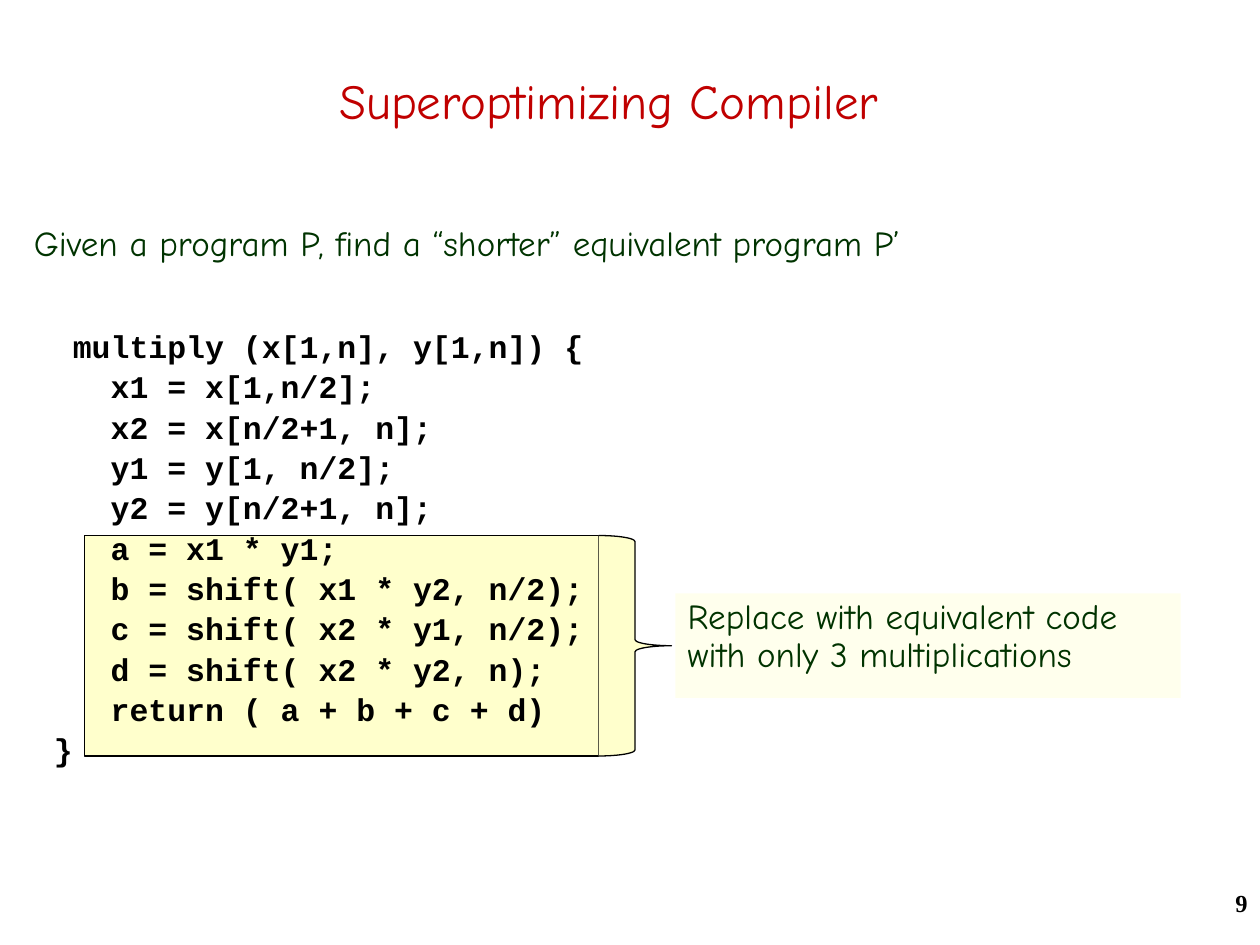
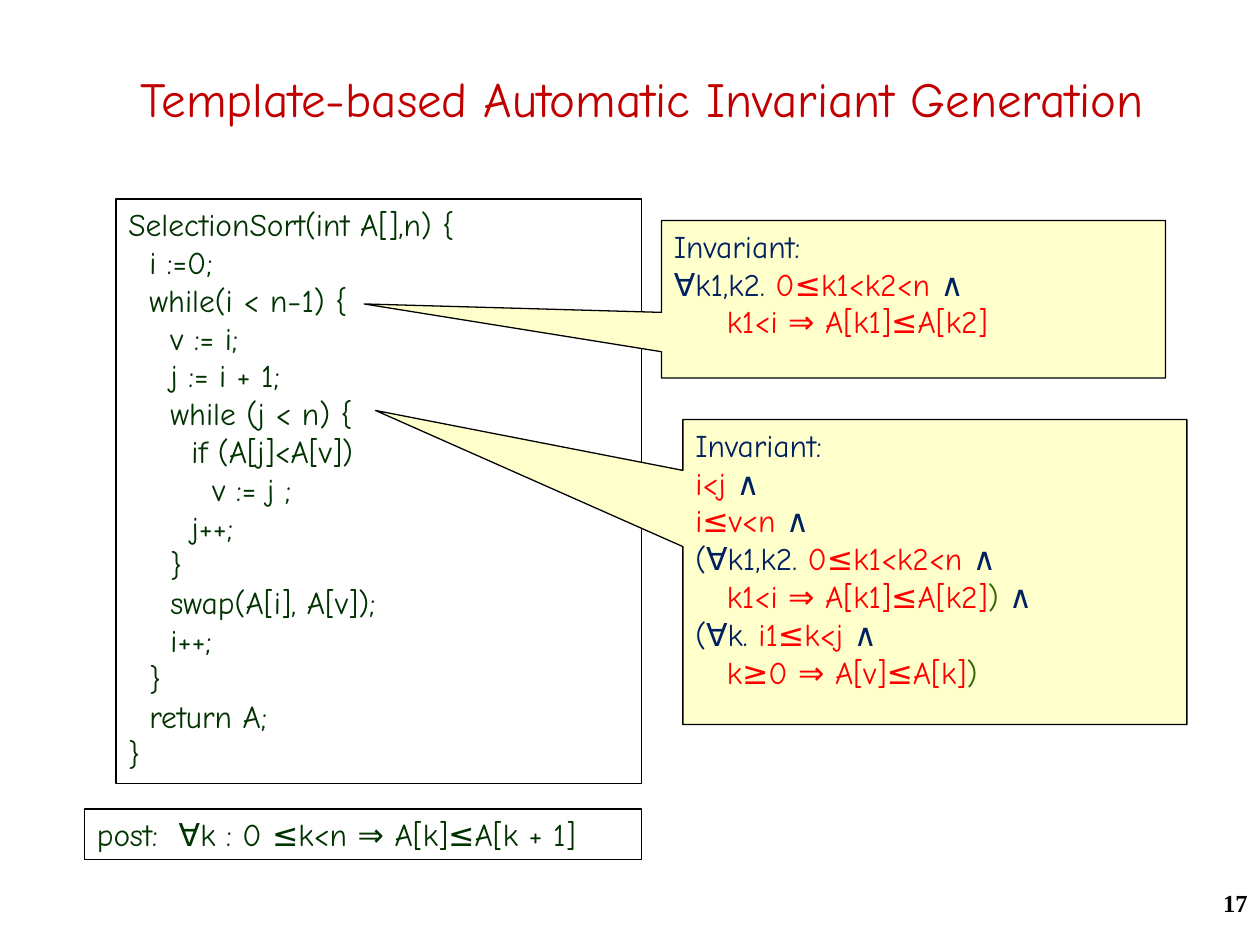
from dataclasses import dataclass

import lxml.etree
import pptx
import pptx.dml.color
import pptx.enum.shapes
import pptx.enum.text
import pptx.oxml.ns
import pptx.util

Inches = pptx.util.Inches
RGBColor = pptx.dml.color.RGBColor
Shape = pptx.enum.shapes.MSO_SHAPE
Align = pptx.enum.text.PP_ALIGN
Anchor = pptx.enum.text.MSO_ANCHOR

BLACK = RGBColor(0x00, 0x00, 0x00)
TITLE_RED = RGBColor(0xC0, 0x00, 0x00)
DARK_GREEN = RGBColor(0x00, 0x33, 0x00)
LEAF_GREEN = RGBColor(0x33, 0x66, 0x00)
NAVY = RGBColor(0x00, 0x20, 0x60)
RED = RGBColor(0xFF, 0x00, 0x00)
PALE_YELLOW = RGBColor(0xFF, 0xFF, 0xCC)

HAND = "Comic Neue"
MONO = "Courier New"
SERIF = "Times New Roman"


@dataclass(frozen=True)
class Style:
    font: str
    size: float
    color: RGBColor
    bold: bool = False
    align: Align = Align.LEFT
    anchor: Anchor = Anchor.TOP
    line_spacing: float = 1.0
    space_before: float = 0


TITLE = Style(HAND, 28, TITLE_RED, align=Align.CENTER, anchor=Anchor.MIDDLE)
BODY = Style(HAND, 20, DARK_GREEN, line_spacing=0.9)
CODE = Style(MONO, 18, BLACK, bold=True, line_spacing=0.9, space_before=3.6)
SKETCH = Style(HAND, 18, DARK_GREEN)
INVARIANT = Style(HAND, 18, NAVY)
PAGE_NUMBER = Style(SERIF, 14, BLACK, bold=True, align=Align.RIGHT)


@dataclass(frozen=True)
class Span:
    text: str
    color: RGBColor | None = None


@dataclass(frozen=True)
class Line:
    spans: tuple[Span, ...]
    indent: float = 0
    tab: float = 0


@dataclass(frozen=True)
class Box:
    left: float
    top: float
    width: float
    height: float
    style: Style | None = None
    lines: tuple[Line, ...] = ()
    kind: Shape | None = None
    fill: RGBColor | None = None
    opacity: int = 100
    outlined: bool = True
    adjustments: tuple[float, ...] = ()


def plain(text: str) -> tuple[Line, ...]:
    """One unstyled line per row of text."""
    return tuple(Line((Span(row),)) for row in text.split("\n"))


def write_lines(shape, style: Style, lines: tuple[Line, ...]) -> None:
    frame = shape.text_frame
    frame.word_wrap = True
    frame.vertical_anchor = style.anchor
    frame.text = "\n".join("" for _ in lines)
    for index, (para, line) in enumerate(zip(frame.paragraphs, lines)):
        properties = para._p.get_or_add_pPr()
        if line.indent:
            properties.set("marL", str(Inches(line.indent)))
        if line.tab:
            stops = lxml.etree.SubElement(properties, pptx.oxml.ns.qn("a:tabLst"))
            lxml.etree.SubElement(stops, pptx.oxml.ns.qn("a:tab"),
                                  pos=str(Inches(line.tab)), algn="l")
        para.alignment = style.align
        para.line_spacing = style.line_spacing
        if index:
            para.space_before = pptx.util.Pt(style.space_before)
        for span in line.spans:
            run = para.add_run()
            run.text = span.text
            run.font.name = style.font
            run.font.size = pptx.util.Pt(style.size)
            run.font.bold = style.bold
            run.font.color.rgb = span.color or style.color


def paint(shape, box: Box) -> None:
    shape.shadow.inherit = False
    if box.fill is None:
        shape.fill.background()
    else:
        shape.fill.solid()
        shape.fill.fore_color.rgb = box.fill
        if box.opacity < 100:
            color = shape._element.spPr.find(".//" + pptx.oxml.ns.qn("a:srgbClr"))
            lxml.etree.SubElement(color, pptx.oxml.ns.qn("a:alpha"),
                                  val=str(box.opacity * 1000))
    if box.outlined:
        shape.line.color.rgb = BLACK
        shape.line.width = pptx.util.Pt(0.75)
    else:
        shape.line.fill.background()


def draw(page, box: Box) -> None:
    place = [Inches(n) for n in (box.left, box.top, box.width, box.height)]
    if box.kind is None:
        shape = page.shapes.add_textbox(*place)
    else:
        shape = page.shapes.add_shape(box.kind, *place)
        for index, value in enumerate(box.adjustments):
            shape.adjustments[index] = value
        paint(shape, box)
    if box.style:
        write_lines(shape, box.style, box.lines)


def add_page(deck, number: str, boxes: list[Box]) -> None:
    page = deck.slides.add_slide(deck.slide_layouts[6])
    footer = Box(7.92, 7, 2.08, 0.5, PAGE_NUMBER, plain(number))
    for box in [*boxes, footer]:
        draw(page, box)


def callout(left: float, top: float, height: float, tip: tuple[float, float],
            lines: tuple[Line, ...]) -> Box:
    return Box(left, top, 4, height, INVARIANT, lines,
               Shape.RECTANGULAR_CALLOUT, PALE_YELLOW, adjustments=tip)


# Slide 1: code to be shortened
MULTIPLY = """ multiply (x[1,n], y[1,n]) {
   x1 = x[1,n/2];
   x2 = x[n/2+1, n];
   y1 = y[1, n/2];
   y2 = y[n/2+1, n];
   a = x1 * y1;
   b = shift( x1 * y2, n/2);
   c = shift( x2 * y1, n/2);
   d = shift( x2 * y2, n);
   return ( a + b + c + d)
}"""

COMPILER = [
    Box(0.67, 4.25, 4.08, 1.75, kind=Shape.RECTANGLE, fill=PALE_YELLOW),
    Box(0.58, 0.17, 8.5, 1.25, TITLE, plain("Superoptimizing Compiler")),
    Box(0.17, 1.75, 9.58, 0.58, BODY,
        plain("Given a program P, find a “shorter” equivalent program P’")),
    Box(0.33, 2.58, 5.5, 3.92, CODE, plain(MULTIPLY)),
    Box(5.36, 4.71, 4.01, 0.83, BODY,
        plain("Replace with equivalent code with only 3 multiplications"),
        Shape.RECTANGLE, PALE_YELLOW, opacity=34, outlined=False),
    Box(4.75, 4.25, 0.58, 1.75, kind=Shape.RIGHT_BRACE, fill=PALE_YELLOW),
]

# Slide 2: sorting code with its loop invariants
SELECTION_SORT = """SelectionSort(int A[],n) {
  i :=0;
  while(i < n−1) {
    v := i;
    j := i + 1;
    while (j < n) {
      if (A[j]<A[v])
        v := j ;
      j++;
    }
    swap(A[i], A[v]);
    i++;
  }
  return A;
}"""

AND = Span("∧")
CLOSE = Span(")", LEAF_GREEN)
HEADING = Line((Span("Invariant:"),))
KEY_RANGE = Span("0≤k1<k2<n ", RED)
SORTED_PREFIX = Span("k1<i ⇒ A[k1]≤A[k2]", RED)

OUTER_INVARIANT = (
    HEADING,
    Line((Span("∀k1,k2. "), KEY_RANGE, AND)),
    Line((SORTED_PREFIX,), indent=0.42),
)
INNER_INVARIANT = (
    HEADING,
    Line((Span("i<j ", RED), AND)),
    Line((Span("i≤v<n ", RED), AND)),
    Line((Span("(∀k1,k2. "), KEY_RANGE, AND)),
    Line((SORTED_PREFIX, Span(") ", LEAF_GREEN), AND), indent=0.25),
    Line((Span("(∀k. "), Span("i1≤k<j ", RED), AND)),
    Line((Span("k≥0 ⇒ A[v]≤A[k]", RED), CLOSE), indent=0.25),
)
POSTCONDITION = (Line((Span("post:\t∀k : 0 ≤k<n ⇒ A[k]≤A[k + 1]"),), tab=0.65),)

INVARIANTS = [
    Box(0.19, 0.18, 9.81, 1.2, TITLE,
        plain("Template-based Automatic Invariant Generation")),
    Box(0.92, 1.58, 4.17, 4.64, SKETCH, plain(SELECTION_SORT), Shape.RECTANGLE),
    Box(0.67, 6.42, 4.42, 0.4, SKETCH, POSTCONDITION, Shape.RECTANGLE),
    callout(5.25, 1.75, 1.25, (-1.09, 0.03), OUTER_INVARIANT),
    callout(5.42, 3.33, 2.42, (-1.11, -0.53), INNER_INVARIANT),
]


def main() -> None:
    deck = pptx.Presentation()
    deck.slide_width = Inches(10)
    deck.slide_height = Inches(7.5)
    add_page(deck, "9", COMPILER)
    add_page(deck, "17", INVARIANTS)
    deck.save("out.pptx")


if __name__ == "__main__":
    main()
